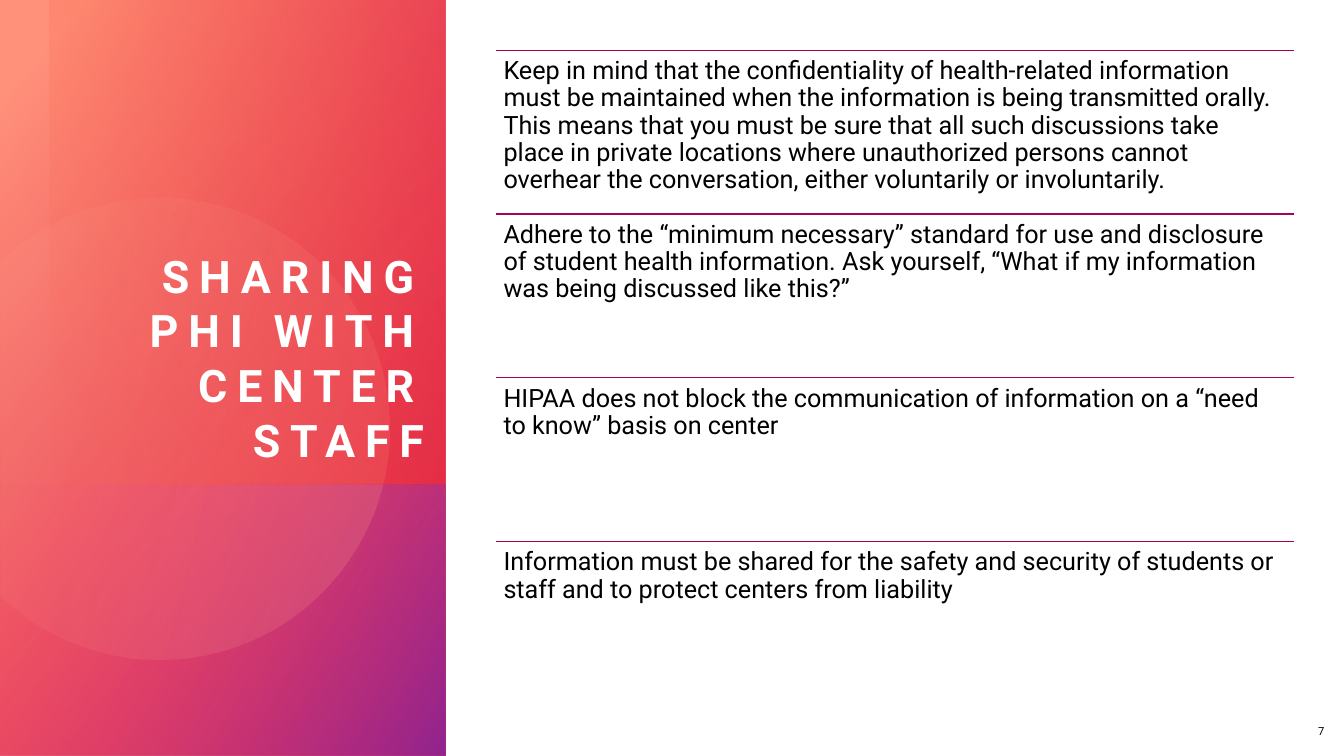
from math import acos, cos, degrees, radians, sin

from lxml.etree import SubElement
from pptx import Presentation
from pptx.dml.color import RGBColor
from pptx.enum.shapes import MSO_CONNECTOR, MSO_SHAPE
from pptx.enum.text import MSO_ANCHOR, PP_ALIGN
from pptx.oxml import parse_xml
from pptx.oxml.ns import nsdecls, qn
from pptx.util import Cm, Pt

WHITE = RGBColor(0xFF, 0xFF, 0xFF)
BLACK = RGBColor(0x00, 0x00, 0x00)
RULE = RGBColor(0xA6, 0x02, 0x5C)
CORAL = RGBColor(0xFF, 0x90, 0x7A)
PEACH = RGBColor(0xFF, 0xBC, 0xAF)
PINK = RGBColor(0xFF, 0x50, 0x76)
RED = RGBColor(0xDA, 0x00, 0x2F)
ORANGE = RGBColor(0xFE, 0x4A, 0x00)
PURPLE = RGBColor(0x92, 0x24, 0x8E)
FONT = "Roboto"

POINTS = [
    "Keep in mind that the confidentiality of health-related information must be "
    "maintained when the information is being transmitted orally. This means that "
    "you must be sure that all such discussions take place in private locations "
    "where unauthorized persons cannot overhear the conversation, either "
    "voluntarily or involuntarily.",
    "Adhere to the “minimum necessary” standard for use and disclosure of "
    "student health information. Ask yourself, “What if my "
    "information was being discussed like this?”",
    "HIPAA does not block the communication of information on a “need to know” "
    "basis on center",
    "Information must be shared for the safety and security of students or staff "
    "and to protect centers from liability",
]


def fill_gradient(sp, stops, angle):
    """Give a shape a linear gradient of (position, colour, opacity) stops and no outline."""
    grad = parse_xml(f'<a:gradFill {nsdecls("a")} rotWithShape="1"><a:gsLst/>'
                     f'<a:lin ang="{angle * 60000}" scaled="0"/></a:gradFill>')
    for pos, color, opacity in stops:
        gs = SubElement(grad[0], qn("a:gs"), pos=str(pos * 1000))
        clr = SubElement(gs, qn("a:srgbClr"), val=str(color))
        SubElement(clr, qn("a:alpha"), val=str(opacity * 1000))
    sp._element.spPr.insert(2, grad)
    sp.line.fill.background()
    sp.shadow.inherit = False


def add_turned_rect(shapes, x, y, w, h, rotation, stops, angle):
    """Add a mirrored, quarter-turned gradient rectangle that covers the given box."""
    sp = shapes.add_shape(MSO_SHAPE.RECTANGLE, Cm(x + (w - h) / 2),
                          Cm(y + (h - w) / 2), Cm(h), Cm(w))
    sp.rotation = rotation
    sp._element.spPr.xfrm.set("flipH", "1")
    fill_gradient(sp, stops, angle)


def add_cut_disc(shapes, cx, cy, radius, tilt):
    """Add a tilted translucent disc whose left side is cut off at the slide edge."""
    half = degrees(acos(-cx / radius))
    steps = 120
    angles = [radians(tilt - half + 2 * half * i / steps) for i in range(steps + 1)]
    pts = [(Cm(cx + radius * cos(a)), Cm(cy + radius * sin(a))) for a in angles]
    builder = shapes.build_freeform(*pts[0])
    builder.add_line_segments(pts[1:], close=True)
    sp = builder.convert_to_shape()
    sp.left, sp.top = Cm(-1.02), Cm(4.88)
    sp.rotation = 360 - tilt
    fill_gradient(sp, [(36, PEACH, 6), (100, CORAL, 26)], 30)


def add_text(shapes, box, text, size, color, inset=(0, 0)):
    """Add a wrapped text box in the given box and return its frame and paragraph."""
    tf = shapes.add_textbox(*map(Cm, box)).text_frame
    tf.word_wrap = True
    tf.margin_left = tf.margin_right = Cm(inset[0])
    tf.margin_top = tf.margin_bottom = Cm(inset[1])
    p = tf.paragraphs[0]
    p.text = text
    p.font.name, p.font.size, p.font.color.rgb = FONT, Pt(size), color
    return tf, p


def add_title_panel(shapes, x, y, w, h):
    """Build the gradient panel with its disc and the slide title."""
    split = 12.22
    add_turned_rect(shapes, x, y, w, h, 270, [(8, CORAL, 100), (100, RED, 89)], 50)
    add_turned_rect(shapes, x, y + split, w, h - split, 270,
                    [(0, PINK, 0), (99, PURPLE, 100)], 60)
    add_cut_disc(shapes, x + 4.01, y + 10.8, 5.81, 16.1)
    add_turned_rect(shapes, x + 1.26, y, w - 1.26, split, 90,
                    [(0, RED, 29), (100, ORANGE, 0)], 110)
    tf, p = add_text(shapes, (x + 1.27, y + 2.41, 9.42, 9.35),
                     "SHARING PHI WITH CENTER STAFF", 32, WHITE)
    tf.vertical_anchor = MSO_ANCHOR.BOTTOM
    p.alignment = PP_ALIGN.RIGHT
    p.line_spacing = 1.02
    p.font.bold = True
    p.runs[0].font._element.set("spc", "700")


def add_points(shapes, x, y, w, h):
    """Stack the points in equal rows, each under a thin rule."""
    group = shapes.add_group_shape().shapes
    row = h / len(POINTS)
    for i, text in enumerate(POINTS):
        top = y + i * row
        rule = group.add_connector(MSO_CONNECTOR.STRAIGHT, Cm(x), Cm(top),
                                   Cm(x + w), Cm(top))
        rule.line.color.rgb, rule.line.width = RULE, Pt(1)
        SubElement(rule._element.spPr, qn("a:effectLst"))
        p = add_text(group, (x, top, w, row), text, 18, BLACK, (0.19, 0.19))[1]
        p.line_spacing = 0.9


def add_page_number(shapes, x, y, w, h):
    """Place the page number at the right of its box."""
    tf, p = add_text(shapes, (x, y, w, h), "7", 8, BLACK, (0.25, 0.13))
    tf.vertical_anchor = MSO_ANCHOR.MIDDLE
    p.alignment = PP_ALIGN.RIGHT
    p.space_after = Pt(6)


def main():
    """Build the slide and save it."""
    prs = Presentation()
    prs.slide_width, prs.slide_height = Cm(33.87), Cm(19.05)
    shapes = prs.slides.add_slide(prs.slide_layouts[6]).shapes
    add_title_panel(shapes, 0, 0, 11.23, 19.05)
    add_page_number(shapes, 32.41, 17.81, 1.22, 1.24)
    add_points(shapes, 12.5, 1.27, 20.1, 16.5)
    prs.save("out.pptx")


if __name__ == "__main__":
    main()
